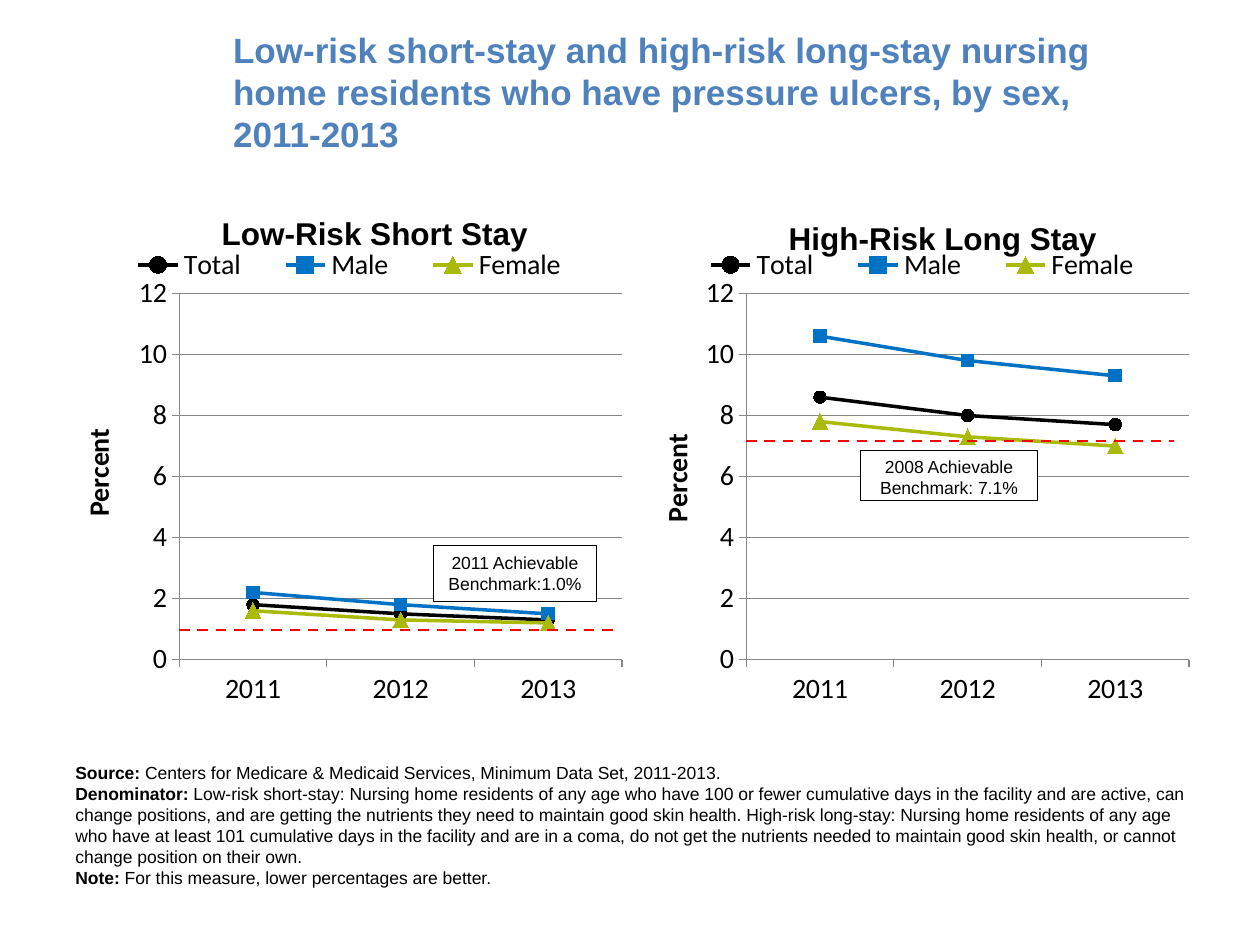
from dataclasses import dataclass

from lxml import etree
from pptx import Presentation
from pptx.chart.data import CategoryChartData
from pptx.dml.color import RGBColor
from pptx.enum.chart import XL_CHART_TYPE, XL_LEGEND_POSITION, XL_MARKER_STYLE, XL_TICK_MARK
from pptx.enum.dml import MSO_LINE
from pptx.enum.shapes import MSO_CONNECTOR, MSO_SHAPE
from pptx.enum.text import MSO_ANCHOR, PP_ALIGN
from pptx.oxml import parse_xml
from pptx.oxml.ns import nsdecls, qn
from pptx.util import Cm, Pt

LINE_MARKERS = XL_CHART_TYPE.LINE_MARKERS
TOP_LEGEND = XL_LEGEND_POSITION.TOP
CIRCLE, SQUARE, TRIANGLE = XL_MARKER_STYLE.CIRCLE, XL_MARKER_STYLE.SQUARE, XL_MARKER_STYLE.TRIANGLE
TICK_OUT = XL_TICK_MARK.OUTSIDE
DASH = MSO_LINE.DASH
STRAIGHT = MSO_CONNECTOR.STRAIGHT
RECTANGLE = MSO_SHAPE.RECTANGLE
TOP, MIDDLE = MSO_ANCHOR.TOP, MSO_ANCHOR.MIDDLE
CENTER = PP_ALIGN.CENTER


@dataclass(frozen=True)
class Theme:
    heading: RGBColor = RGBColor(0x4F, 0x81, 0xBD)
    black: RGBColor = RGBColor(0, 0, 0)
    white: RGBColor = RGBColor(255, 255, 255)
    grid: RGBColor = RGBColor(0x86, 0x86, 0x86)
    blue: RGBColor = RGBColor(0x00, 0x72, 0xC6)
    green: RGBColor = RGBColor(0xAA, 0xBA, 0x0A)
    red: RGBColor = RGBColor(255, 0, 0)
    text_font: str = "Arial"
    axis_font: str = "Calibri"
    title_size: Pt = Pt(20)
    chart_title_size: Pt = Pt(18)
    axis_size: Pt = Pt(16)
    note_size: Pt = Pt(10)


theme = Theme()


def style_font(font, size, color=theme.black, name=theme.text_font, bold=False):
    font.size, font.name, font.bold = size, name, bold
    font.color.rgb = color


def set_layout(parent, x, y, w=None, h=None):
    for old in parent.findall(qn("c:layout")):
        parent.remove(old)
    layout = parse_xml(f"<c:layout {nsdecls('c')}><c:manualLayout/></c:layout>")
    values = {"xMode": "edge", "yMode": "edge", "x": x, "y": y, "w": w, "h": h}
    if parent.tag == qn("c:plotArea"):
        values = {"layoutTarget": "inner", **values}
    for tag, value in values.items():
        if value is not None:
            etree.SubElement(layout[0], qn(f"c:{tag}")).set("val", str(value))
    overlay = parent.find(qn("c:overlay"))
    if overlay is None:
        parent.insert(0, layout)
    else:
        overlay.addprevious(layout)


prs = Presentation()
prs.slide_width, prs.slide_height = Cm(25.4), Cm(19.05)
s = prs.slides.add_slide(prs.slide_layouts[6])

tf = s.shapes.add_textbox(Cm(4.45), Cm(0.64), Cm(18.85), Cm(2.41)).text_frame
tf.word_wrap = True
tf.vertical_anchor = MIDDLE
tf.text = ("Low-risk short-stay and high-risk long-stay nursing home residents "
           "who have pressure ulcers, by sex, 2011-2013")
style_font(tf.paragraphs[0].runs[0].font, theme.title_size, theme.heading, bold=True)

notes = [
    ("Source:", " Centers for Medicare & Medicaid Services, Minimum Data Set, 2011-2013."),
    ("Denominator:", " Low-risk short-stay: Nursing home residents of any age who have 100 or fewer "
     "cumulative days in the facility and are active, can change positions, and are getting the "
     "nutrients they need to maintain good skin health. High-risk long-stay: Nursing home residents "
     "of any age who have at least 101 cumulative days in the facility and are in a coma, do not get "
     "the nutrients needed to maintain good skin health, or cannot change position on their own."),
    ("Note:", " For this measure, lower percentages are better."),
]
tf = s.shapes.add_textbox(Cm(1.27), Cm(15.24), Cm(22.86), Cm(2.82)).text_frame
tf.word_wrap = True
for i, note in enumerate(notes):
    p = tf.paragraphs[0] if i == 0 else tf.add_paragraph()
    for text, bold in zip(note, (True, False)):
        r = p.add_run()
        r.text = text
        style_font(r.font, theme.note_size, bold=bold)

series_styles = [
    ("Total", theme.black, CIRCLE, 7),
    ("Male", theme.blue, SQUARE, 7),
    ("Female", theme.green, TRIANGLE, 9),
]
panels = [
    dict(title="Low-Risk Short Stay", left=1.27,
         values=[(1.8, 1.5, 1.3), (2.2, 1.8, 1.5), (1.6, 1.3, 1.2)],
         title_at=(0.27, 0.01), legend_at=(0.07, 0.08), axis_title_at=(0.02, 0.42),
         benchmark=(3.61, 12.5, 12.7), box=(8.74, 11, 3.28, 1.12),
         label="2011 Achievable Benchmark:1.0%"),
    dict(title="High-Risk Long Stay", left=12.7,
         values=[(8.6, 8, 7.7), (10.6, 9.8, 9.3), (7.8, 7.3, 7)],
         title_at=(0.27, 0.02), legend_at=(0.08, 0.08), axis_title_at=(0.04, 0.43),
         benchmark=(15.04, 23.67, 8.89), box=(17.35, 9.07, 3.56, 1.02),
         label="2008 Achievable Benchmark: 7.1%"),
]

for panel in panels:
    data = CategoryChartData(number_format="0.0")
    data.categories = ["2011", "2012", "2013"]
    for (name, *_), values in zip(series_styles, panel["values"]):
        data.add_series(name, values)
    chart = s.shapes.add_chart(LINE_MARKERS, Cm(panel["left"]), Cm(4.06),
                               Cm(11.43), Cm(10.67), data).chart
    style_font(chart.font, theme.note_size)
    chart.plots[0].vary_by_categories = False

    chart.has_title = True
    tf = chart.chart_title.text_frame
    tf.text = panel["title"]
    style_font(tf.paragraphs[0].runs[0].font, theme.chart_title_size, bold=True)
    chart.chart_title.include_in_layout = False

    chart.has_legend = True
    chart.legend.position = TOP_LEGEND
    chart.legend.include_in_layout = False
    style_font(chart.legend.font, theme.axis_size, name=theme.axis_font)

    for axis in (chart.category_axis, chart.value_axis):
        axis.major_tick_mark = TICK_OUT
        axis.format.line.color.rgb = theme.grid
        style_font(axis.tick_labels.font, theme.axis_size, name=theme.axis_font)
    axis = chart.value_axis
    axis.minimum_scale, axis.maximum_scale, axis.major_unit = 0, 12, 2
    axis.tick_labels.number_format = "0"
    axis.tick_labels.number_format_is_linked = False
    axis.has_major_gridlines = True
    axis.major_gridlines.format.line.color.rgb = theme.grid
    tf = axis.axis_title.text_frame
    tf.text = "Percent"
    style_font(tf.paragraphs[0].runs[0].font, theme.axis_size, name=theme.axis_font, bold=True)

    for series, (_, color, marker, size) in zip(chart.plots[0].series, series_styles):
        series.smooth = False
        series.format.line.color.rgb = color
        series.format.line.width = Pt(2)
        series.marker.style, series.marker.size = marker, size
        series.marker.format.fill.solid()
        series.marker.format.fill.fore_color.rgb = color
        series.marker.format.line.color.rgb = color

    root = chart.element.find(qn("c:chart"))
    plot_area = root.find(qn("c:plotArea"))
    set_layout(root.find(qn("c:title")), *panel["title_at"])
    set_layout(root.find(qn("c:legend")), *panel["legend_at"], 0.87, 0.08)
    set_layout(plot_area.find(qn("c:valAx")).find(qn("c:title")), *panel["axis_title_at"])
    set_layout(plot_area, 0.205, 0.174, 0.781, 0.692)

    x1, x2, y = panel["benchmark"]
    line = s.shapes.add_connector(STRAIGHT, Cm(x1), Cm(y), Cm(x2), Cm(y))
    line.line.color.rgb = theme.red
    line.line.width = Pt(1.5)
    line.line.dash_style = DASH
    etree.SubElement(line.element.spPr, qn("a:effectLst"))

    sp = s.shapes.add_shape(RECTANGLE, *map(Cm, panel["box"]))
    sp.shadow.inherit = False
    sp.fill.solid()
    sp.fill.fore_color.rgb = theme.white
    sp.line.color.rgb = theme.black
    sp.line.width = Pt(0.25)
    tf = sp.text_frame
    tf.word_wrap = True
    tf.vertical_anchor = TOP
    tf.text = panel["label"]
    p = tf.paragraphs[0]
    p.alignment = CENTER
    style_font(p.runs[0].font, theme.note_size)

prs.save("out.pptx")
